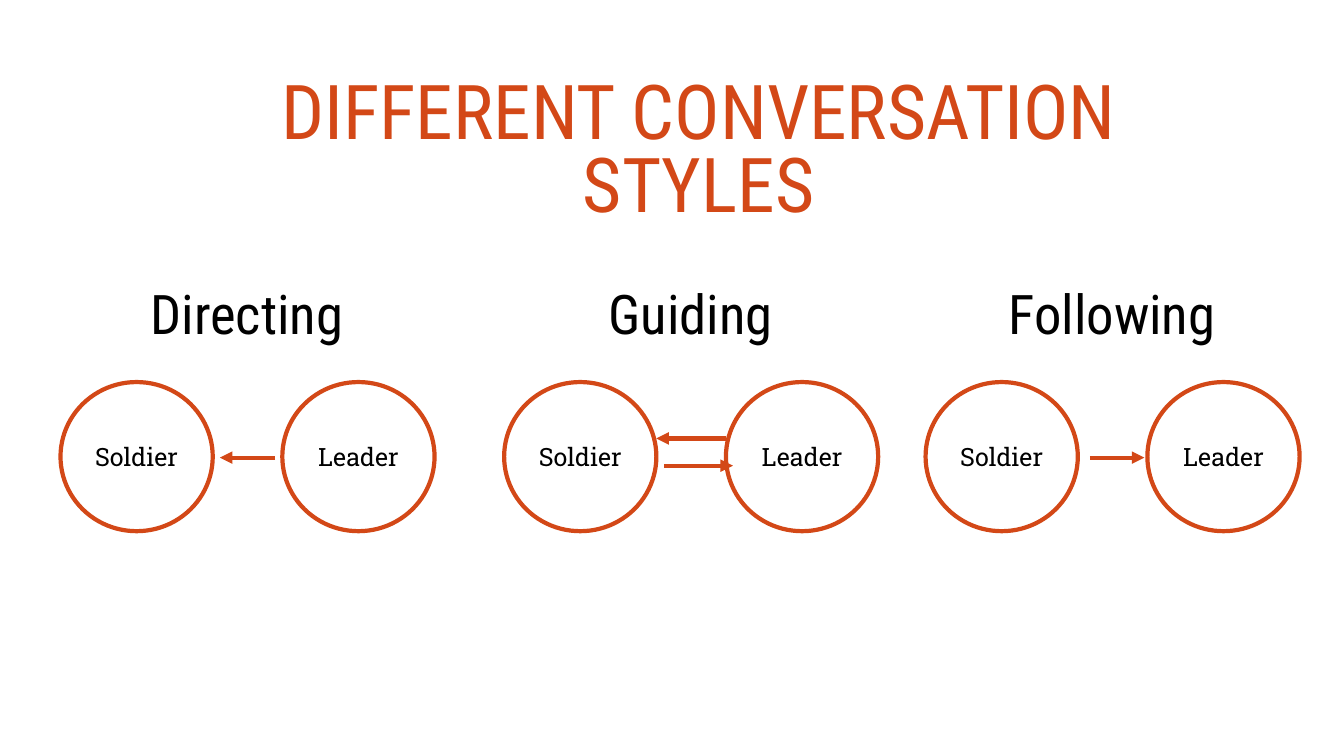
"""Build the slide on directing, guiding and following conversations."""
from dataclasses import dataclass

import lxml.etree
import pptx
import pptx.dml.color
import pptx.enum.shapes
import pptx.enum.text
import pptx.oxml.ns
import pptx.shapes.base
import pptx.slide
import pptx.text.text
import pptx.util
from pptx.util import Inches


@dataclass(frozen=True)
class Theme:
    accent: str = "D34817"
    ink: str = "000000"
    paper: str = "FFFFFF"
    heading_font: str = "Roboto Condensed"
    role_font: str = "Roboto Slab"
    title_size: int = 54
    style_size: int = 39
    role_size: int = 18
    stroke: int = 3


@dataclass(frozen=True)
class Arrow:
    start: float
    end: float
    y: float


@dataclass(frozen=True)
class Style:
    name: str
    left: float
    arrows: tuple[Arrow, ...]


THEME = Theme()
ROLES = ("Soldier", "Leader")
ROLE_STEP = 2.2
ROLE_TOP = 3.79
ROLE_WIDTH, ROLE_HEIGHT = 1.51, 1.48
STYLES = (
    Style("Directing", 0.6, (Arrow(2.73, 2.18, 4.54),)),
    Style("Guiding", 5, (Arrow(7.2, 6.51, 4.35), Arrow(6.59, 7.27, 4.62))),
    Style("Following", 9.18, (Arrow(10.81, 11.35, 4.54),)),
)


def color(value: str) -> pptx.dml.color.RGBColor:
    """Turn a hexadecimal value into a colour."""
    return pptx.dml.color.RGBColor.from_string(value)


def write(frame: pptx.text.text.TextFrame, text: str, font: str, size: int,
          ink: str, anchor: pptx.enum.text.MSO_ANCHOR, spacing: float) -> None:
    """Put one centred, formatted paragraph in a text frame."""
    frame.text = text
    frame.word_wrap = True
    frame.auto_size = pptx.enum.text.MSO_AUTO_SIZE.NONE
    frame.vertical_anchor = anchor
    paragraph = frame.paragraphs[0]
    paragraph.alignment = pptx.enum.text.PP_ALIGN.CENTER
    paragraph.line_spacing = spacing
    for run in paragraph.runs:
        run.font.name = font
        run.font.size = pptx.util.Pt(size)
        run.font.bold = False
        run.font.color.rgb = color(ink)


def draw_role(slide: pptx.slide.Slide, role: str, left: float) -> None:
    """Draw the circle of one speaker."""
    circle = slide.shapes.add_shape(
        pptx.enum.shapes.MSO_SHAPE.OVAL, Inches(left), Inches(ROLE_TOP),
        Inches(ROLE_WIDTH), Inches(ROLE_HEIGHT))
    circle.shadow.inherit = False
    circle.fill.solid()
    circle.fill.fore_color.rgb = color(THEME.paper)
    circle.line.color.rgb = color(THEME.accent)
    circle.line.width = pptx.util.Pt(THEME.stroke)
    write(circle.text_frame, role, THEME.role_font, THEME.role_size,
          THEME.ink, pptx.enum.text.MSO_ANCHOR.MIDDLE, 1.0)


def draw_arrow(slide: pptx.slide.Slide, arrow: Arrow) -> None:
    """Draw a horizontal arrow between speakers."""
    connector = slide.shapes.add_connector(
        pptx.enum.shapes.MSO_CONNECTOR.STRAIGHT, Inches(arrow.start),
        Inches(arrow.y), Inches(arrow.end), Inches(arrow.y))
    connector.line.color.rgb = color(THEME.accent)
    connector.line.width = pptx.util.Pt(THEME.stroke)
    qn = pptx.oxml.ns.qn
    properties = connector.element.spPr
    lxml.etree.SubElement(properties.find(qn("a:ln")), qn("a:tailEnd"), type="triangle")
    lxml.etree.SubElement(properties, qn("a:effectLst"))


def draw_style(slide: pptx.slide.Slide, style: Style) -> None:
    """Draw a conversation style with its name, speakers and arrows."""
    heading = slide.shapes.add_textbox(
        Inches(style.left + 0.21), Inches(2.64), Inches(3.28), Inches(0.84))
    write(heading.text_frame, style.name, THEME.heading_font, THEME.style_size,
          THEME.ink, pptx.enum.text.MSO_ANCHOR.BOTTOM, 0.9)
    for index, role in enumerate(ROLES):
        draw_role(slide, role, style.left + index * ROLE_STEP)
    for arrow in style.arrows:
        draw_arrow(slide, arrow)


def main() -> None:
    """Build and save the presentation."""
    presentation = pptx.Presentation()
    presentation.slide_width = Inches(13.33)
    presentation.slide_height = Inches(7.5)
    slide = presentation.slides.add_slide(presentation.slide_layouts[0])
    subtitle = slide.placeholders[1].element
    subtitle.getparent().remove(subtitle)
    title = slide.shapes.title
    title.left, title.top = Inches(1.93), Inches(1.11)
    title.width, title.height = Inches(10), Inches(0.84)
    write(title.text_frame, "DIFFERENT CONVERSATION STYLES", THEME.heading_font,
          THEME.title_size, THEME.accent, pptx.enum.text.MSO_ANCHOR.MIDDLE, 0.8)
    for style in STYLES:
        draw_style(slide, style)
    presentation.save("out.pptx")


if __name__ == "__main__":
    main()
